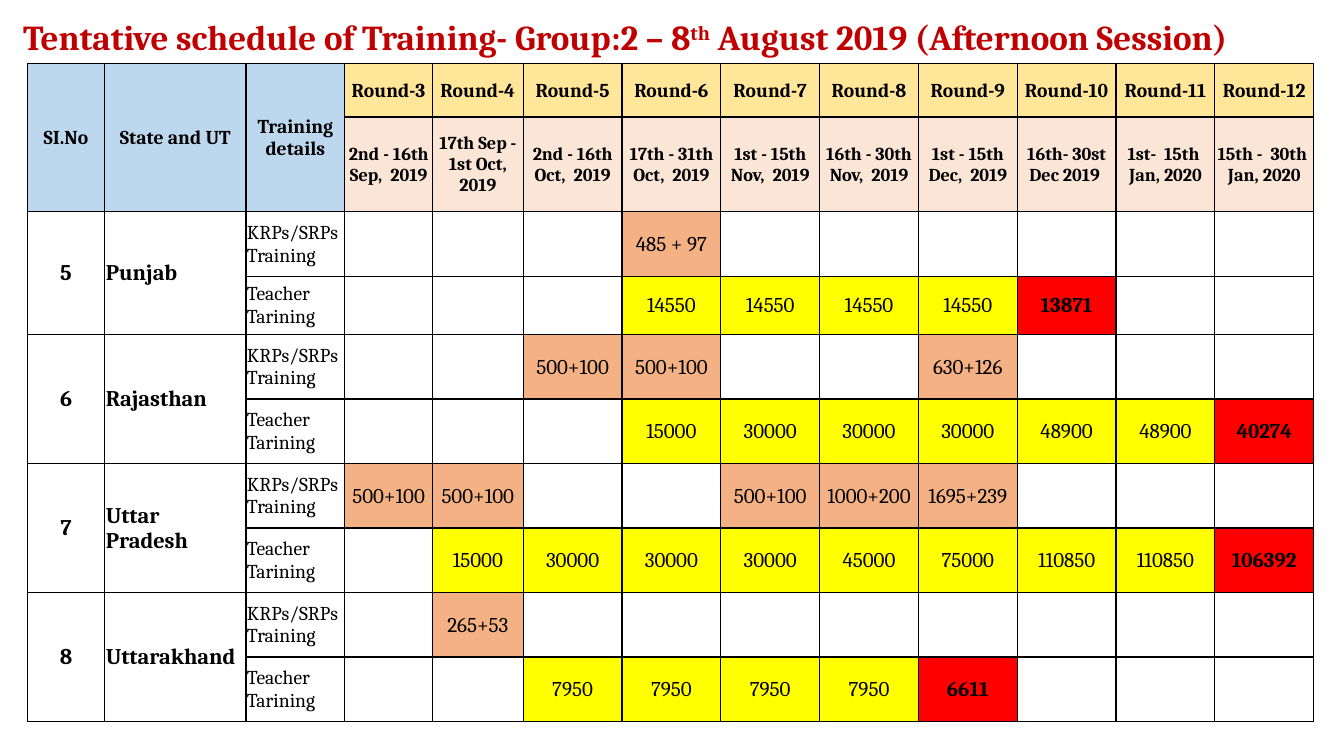
from lxml.etree import SubElement
from pptx import Presentation
from pptx.dml.color import RGBColor as RGB
from pptx.enum.text import MSO_ANCHOR as Anchor, MSO_AUTO_SIZE as Fit, PP_ALIGN as Align
from pptx.oxml.ns import qn
from pptx.util import Inches as In, Pt

# Content
TITLE = [("Tentative schedule of Training- Group:2 – 8", 0), ("th", 30000),
         (" August 2019 (Afternoon Session)", 0)]
HEADS = ["SI.No", "State and UT", "Training details"]
FIRST = 3  # number of the first round
DATES = ["2nd - 16th Sep,  2019", "17th Sep - 1st Oct, 2019", "2nd - 16th Oct,  2019",
         "17th - 31th Oct,  2019", "1st - 15th Nov,  2019", "16th - 30th Nov,  2019",
         "1st - 15th Dec,  2019", "16th- 30st Dec 2019 ", "1st-  15th  Jan, 2020",
         "15th -  30th  Jan, 2020"]
KINDS = ["KRPs/SRPs Training", "Teacher Tarining"]
# Number, state, trainers by round, first teacher round, teachers per round
STATES = [
    (5, "Punjab", {6: "485 + 97"}, 6, [14550, 14550, 14550, 14550, 13871]),
    (6, "Rajasthan", {5: "500+100", 6: "500+100", 9: "630+126"}, 6,
     [15000, 30000, 30000, 30000, 48900, 48900, 40274]),
    (7, "Uttar Pradesh", {3: "500+100", 4: "500+100", 7: "500+100", 8: "1000+200",
                          9: "1695+239"}, 4,
     [15000, 30000, 30000, 30000, 45000, 75000, 110850, 110850, 106392]),
    (8, "Uttarakhand", {4: "265+53"}, 5, [7950, 7950, 7950, 7950, 6611]),
]

# Look
FONT = "Cambria"
HEX = {"title": "C00000", "ink": "000000", "head": "BDD7EE", "round": "FFE699",
       "date": "FBE5D6", "trainer": "F4B183", "teacher": "FFFF00", "last": "FF0000"}
WIDE, HIGH = 13.33, 7.5
COLS = [0.77, 1.4, 0.98, 0.87, 0.9] + [0.98] * 8
ROWS = [0.53, 0.94, 0.64, 0.58] + [0.64] * 6
LEAD = len(HEADS)  # columns before the rounds


def write(para, text, size, color="ink", bold=False, align=Align.LEFT, raised=0):
    para.alignment = align
    run = para.add_run()
    run.text = text
    font = run.font
    font.name, font.size, font.bold = FONT, Pt(size), bold
    font.color.rgb = RGB.from_string(HEX[color])
    if raised:
        run._r.get_or_add_rPr().set("baseline", str(raised))


def frame(cell):
    props = cell._tc.get_or_add_tcPr()
    for side in ("lnL", "lnR", "lnT", "lnB"):
        line = SubElement(props, qn("a:" + side), w=str(Pt(1)))
        fill = SubElement(line, qn("a:solidFill"))
        SubElement(fill, qn("a:srgbClr"), val=HEX["ink"])


def put(row, col, text, size, fill=None, **form):
    cell = grid.cell(row, col)
    write(cell.text_frame.paragraphs[0], str(text), size, **form)
    if fill:
        cell.fill.solid()
        cell.fill.fore_color.rgb = RGB.from_string(HEX[fill])


def join(row, col):
    grid.cell(row, col).merge(grid.cell(row + 1, col))


deck = Presentation()
deck.slide_width, deck.slide_height = In(WIDE), In(HIGH)
slide = deck.slides.add_slide(deck.slide_layouts[5])

# Title
title = slide.shapes.title
title.left, title.top, title.width, title.height = In(0.13), In(0.05), In(WIDE * 0.97), In(0.68)
body = title.text_frame
body.auto_size, body.word_wrap, body.vertical_anchor = Fit.NONE, True, Anchor.MIDDLE
body.paragraphs[0].line_spacing = 0.9
for text, raised in TITLE:
    write(body.paragraphs[0], text, 25, color="title", bold=True, raised=raised)

# Table grid
grid = slide.shapes.add_table(len(ROWS), len(COLS), In(0.27), In(0.63),
                              In(sum(COLS)), In(sum(ROWS))).table
grid.first_row = grid.horz_banding = False
for col, width in zip(grid.columns, COLS):
    col.width = In(width)
for row, height in zip(grid.rows, ROWS):
    row.height = In(height)
for cell in grid.iter_cells():
    cell.margin_left = cell.margin_top = cell.margin_right = In(0.01)
    cell.margin_bottom = 0
    cell.vertical_anchor = Anchor.MIDDLE
    frame(cell)
    cell.fill.background()

# Header rows
mid = {"align": Align.CENTER}
strong = {"align": Align.CENTER, "bold": True}
for col, head in enumerate(HEADS):
    join(0, col)
    put(0, col, head, 14, "head", **strong)
for step, date in enumerate(DATES):
    put(0, LEAD + step, f"Round-{FIRST + step}", 14, "round", **strong)
    put(1, LEAD + step, date, 13, "date", **strong)

# Two rows per state; the final teacher round is marked
for spot, (num, state, trainers, start, teachers) in enumerate(STATES):
    top = 2 + 2 * spot
    join(top, 0)
    join(top, 1)
    put(top, 0, num, 16, **strong)
    put(top, 1, state, 16, bold=True)
    for step, kind in enumerate(KINDS):
        put(top + step, 2, kind, 14)
    for turn, count in trainers.items():
        put(top, LEAD + turn - FIRST, count, 15, "trainer", **mid)
    end = start + len(teachers) - 1
    for turn, count in enumerate(teachers, start):
        last = turn == end
        put(top + 1, LEAD + turn - FIRST, count, 15, "last" if last else "teacher",
            bold=last, **mid)

deck.save("out.pptx")
